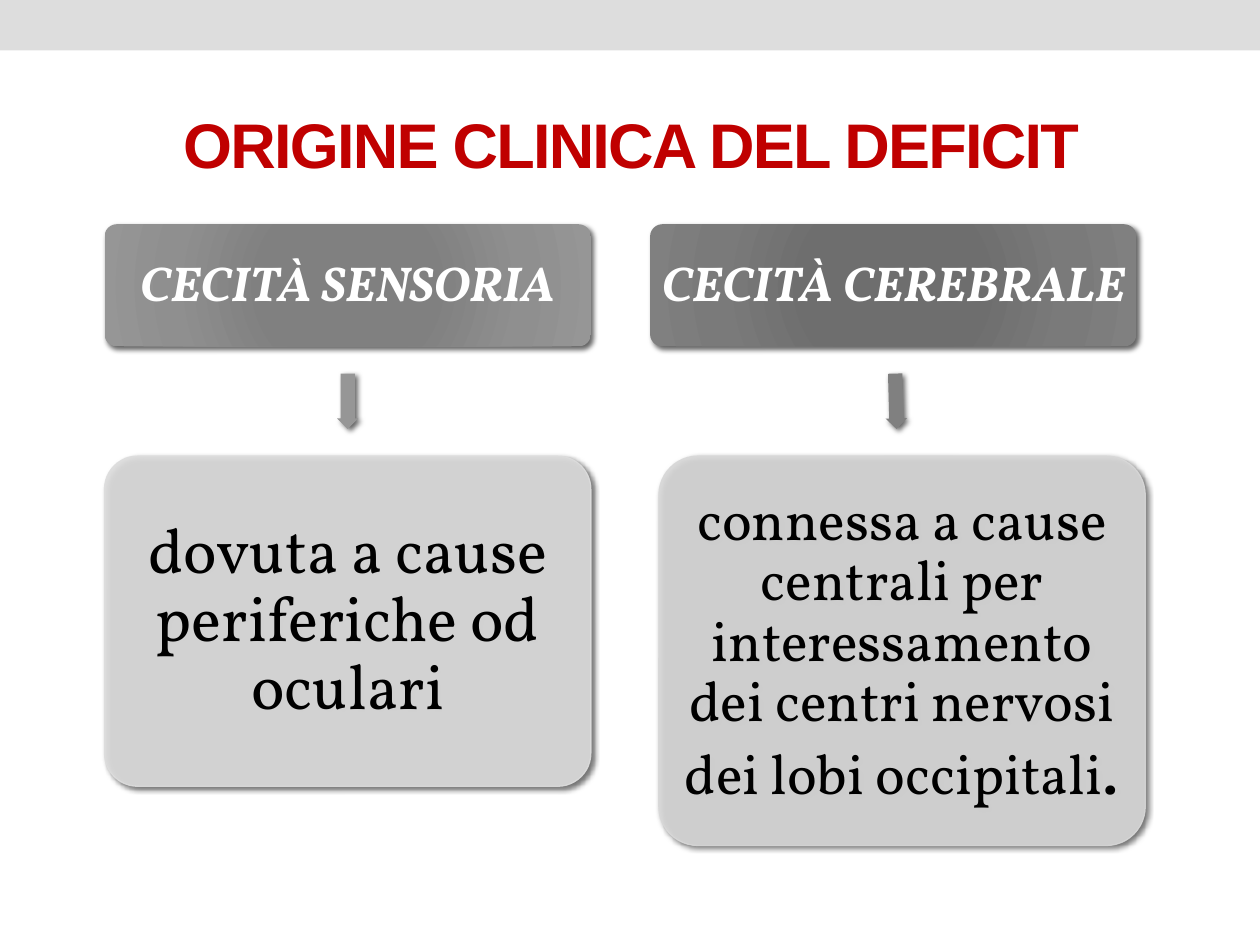
import pptx
import pptx.dml.color
import pptx.enum.shapes
import pptx.enum.text
import pptx.oxml
import pptx.oxml.ns
import pptx.util
import lxml.etree

SHAPES = pptx.enum.shapes.MSO_SHAPE
COLORS = {
    "band": "DDDDDD", "title": "C00000", "white": "FFFFFF", "black": "000000",
    "arrow_left": "969696", "arrow_right": "808080",
    "card_left": "DDDDDD", "card_right": "D8D8D8",
}
GRADIENTS = {
    "left": ((0, "808080"), (34, "808080"), (70, "8F8F8F"), (100, "969696")),
    "right": ((0, "6E6E6E"), (34, "6E6E6E"), (70, "7A7A7A"), (100, "808080")),
}


class SlideBuilder:
    """Draws styled elements on one slide, measured on a 100 by 75 grid."""

    def __init__(self, deck):
        """Set the slide size and open a title-only page."""
        deck.slide_width = pptx.util.Inches(10)
        deck.slide_height = pptx.util.Inches(7.5)
        self.column = deck.slide_width / 100
        self.row = deck.slide_height / 75
        self.page = deck.slides.add_slide(deck.slide_layouts[5])

    def place(self, left, top, width, height):
        """Turn grid columns and rows into lengths."""
        return (round(left * self.column), round(top * self.row),
                round(width * self.column), round(height * self.row))

    def color(self, name):
        """Look up a named colour."""
        return pptx.dml.color.RGBColor.from_string(COLORS[name])

    def child(self, parent, tag, **attributes):
        """Append a DrawingML element."""
        values = {key: str(value) for key, value in attributes.items()}
        return lxml.etree.SubElement(parent, pptx.oxml.ns.qn(tag), values)

    def shape(self, kind, area, fill):
        """Add a flat shape without an outline."""
        shape = self.page.shapes.add_shape(kind, *self.place(*area))
        shape.shadow.inherit = False
        shape.fill.solid()
        shape.fill.fore_color.rgb = self.color(fill)
        shape.line.fill.background()
        return shape

    def cast_shadow(self, shape):
        """Give a shape the soft diagonal shadow."""
        effects = shape._element.spPr.find(pptx.oxml.ns.qn("a:effectLst"))
        shadow = self.child(effects, "a:outerShdw", blurRad=pptx.util.Pt(3),
                            dist=pptx.util.Pt(2), dir=45 * 60000, rotWithShape=0)
        tint = self.child(shadow, "a:srgbClr", val=COLORS["black"])
        self.child(tint, "a:alpha", val=60000)

    def caption(self, box, spans, color, bold=False, italic=False, inset=0.04):
        """Fill a box with one centred paragraph of (text, size) spans."""
        frame = box.text_frame
        frame.word_wrap = True
        frame.vertical_anchor = pptx.enum.text.MSO_ANCHOR.MIDDLE
        frame.margin_left = frame.margin_right = pptx.util.Inches(inset)
        frame.margin_top = frame.margin_bottom = pptx.util.Inches(inset)
        para = frame.paragraphs[0]
        para.alignment = pptx.enum.text.PP_ALIGN.CENTER
        para.line_spacing = 0.9
        after = self.child(para._p.get_or_add_pPr(), "a:spcAft")
        self.child(after, "a:spcPct", val=35000)
        for text, size in spans:
            self.span(para, text, size, "Vollkorn", color, bold, italic)

    def span(self, para, text, size, font, color, bold=False, italic=False):
        """Add one formatted run."""
        span = para.add_run()
        span.text = text
        span.font.name = font
        span.font.size = pptx.util.Pt(size)
        span.font.bold = bold
        span.font.italic = italic
        span.font.color.rgb = self.color(color)
        return span

    def title(self, area, text):
        """Move and fill the title placeholder."""
        box = self.page.shapes.title
        box.left, box.top, box.width, box.height = self.place(*area)
        box.text_frame.vertical_anchor = pptx.enum.text.MSO_ANCHOR.MIDDLE
        para = box.text_frame.paragraphs[0]
        para.alignment = pptx.enum.text.PP_ALIGN.CENTER
        span = self.span(para, text, 36, "Arial", "title", bold=True)
        span._r.get_or_add_rPr().set("spc", "-100")

    def header(self, area, text, gradient):
        """Add a heading box with a radial gradient."""
        box = self.shape(SHAPES.ROUNDED_RECTANGLE, area, "band")
        box.adjustments[0] = 0.1
        properties = box._element.spPr
        fill = pptx.oxml.parse_xml(
            f'<a:gradFill {pptx.oxml.ns.nsdecls("a")} rotWithShape="1"/>')
        stops = self.child(fill, "a:gsLst")
        for position, value in GRADIENTS[gradient]:
            stop = self.child(stops, "a:gs", pos=position * 1000)
            self.child(stop, "a:srgbClr", val=value)
        circle = self.child(fill, "a:path", path="circle")
        self.child(circle, "a:fillToRect", l=100000, t=100000, r=100000, b=100000)
        properties.replace(properties.find(pptx.oxml.ns.qn("a:solidFill")), fill)
        self.cast_shadow(box)
        self.caption(box, [(text, 28)], "white", bold=True, italic=True)

    def arrow(self, area, rotation, color):
        """Add a small block arrow turned downwards."""
        arrow = self.shape(SHAPES.RIGHT_ARROW, area, color)
        arrow.adjustments[0] = 0.667
        arrow.adjustments[1] = 0.5
        arrow.rotation = rotation
        self.cast_shadow(arrow)

    def card(self, area, spans, color, inset):
        """Add a slightly transparent explanation card."""
        box = self.shape(SHAPES.ROUNDED_RECTANGLE, area, color)
        box.adjustments[0] = 0.1
        box.line.color.rgb = self.color(color)
        box.line.width = pptx.util.Pt(0.75)
        for tint in box._element.spPr.iter(pptx.oxml.ns.qn("a:srgbClr")):
            self.child(tint, "a:alpha", val=90000)
        self.cast_shadow(box)
        self.caption(box, spans, "black", inset=inset)


def main():
    """Build and save the slide."""
    deck = pptx.Presentation()
    slide = SlideBuilder(deck)
    slide.shape(SHAPES.RECTANGLE, (0, 0, 100, 4), "band")
    slide.title((5.1, 6, 90, 10.8), "ORIGINE CLINICA DEL DEFICIT")
    cause = "connessa a cause centrali per interessamento dei centri nervosi dei lobi occipitali"
    branches = (
        ("left", "CECITÀ SENSORIA", 8.3, 25.4, 90, 8.3, 26.2, 0.05,
         [("dovuta a cause periferiche od oculari", 36)]),
        ("right", "CECITÀ CEREBRALE", 51.6, 68.9, 88.5, 52.3, 30.9, 0.04,
         [(cause, 32), (".", 40)]),
    )
    for side, heading, head_x, arrow_x, turn, card_x, height, inset, spans in branches:
        slide.header((head_x, 17.8, 38.6, 9.7), heading, side)
        slide.arrow((arrow_x, 31, 4.4, 1.7), turn, f"arrow_{side}")
        slide.card((card_x, 36.2, 38.6, height), spans, f"card_{side}", inset)
    deck.save("out.pptx")


if __name__ == "__main__":
    main()
